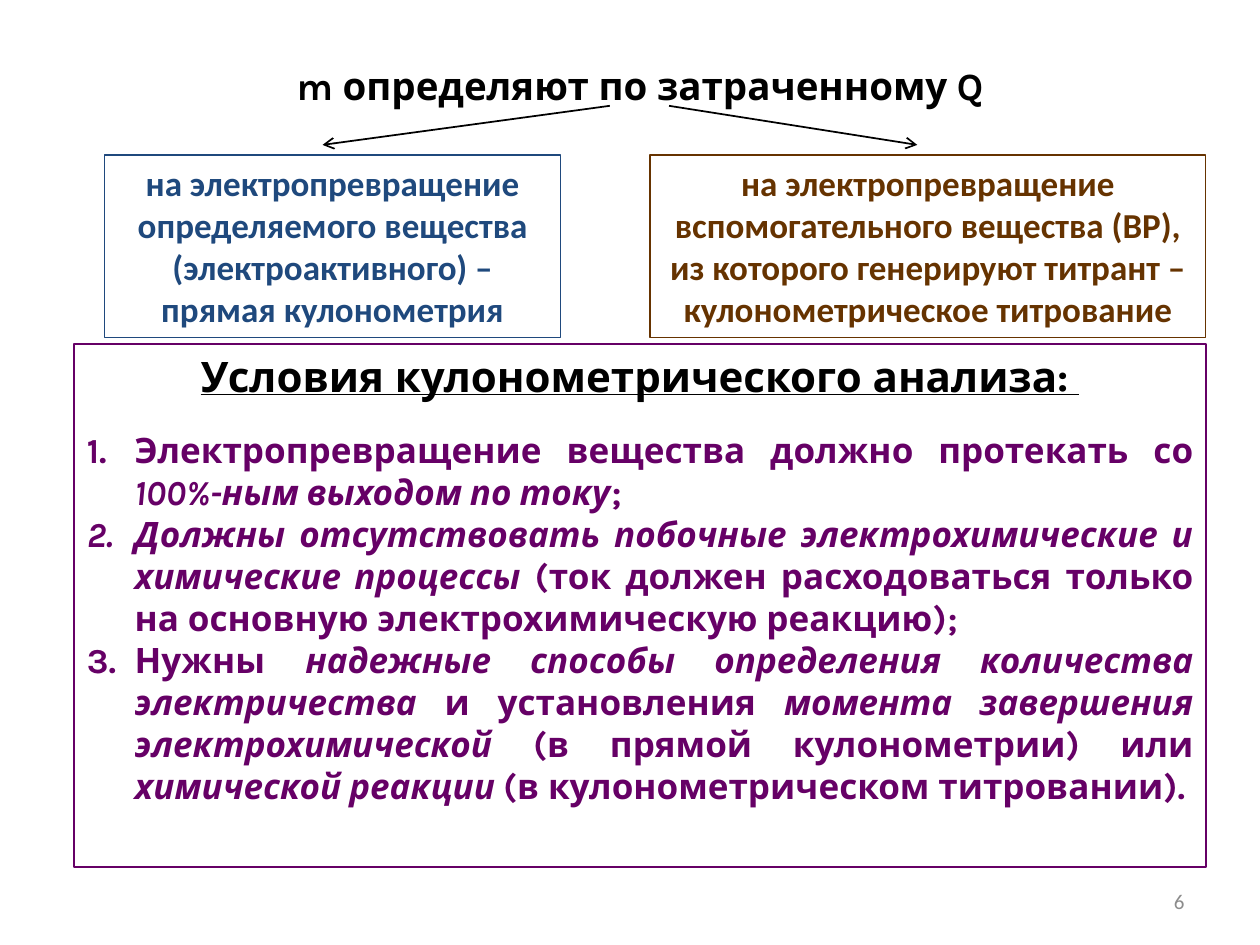
import pptx
import pptx.dml.color
import pptx.enum.shapes
import pptx.enum.text
import pptx.oxml
import pptx.oxml.ns
import pptx.util

ALIGN = pptx.enum.text.PP_ALIGN
ANCHOR = pptx.enum.text.MSO_ANCHOR
INK, BLUE, BROWN, PURPLE, GREY = "000000", "1F497D", "663300", "660066", "8C8C8C"
COLUMNS, ROWS = 100, 75


def color(hex_value):
    return pptx.dml.color.RGBColor.from_string(hex_value)


def set_all(target, values):
    for key, value in values.items():
        setattr(target, key, value)


class SlideBuilder:
    """Holds the style and the current slide, measured on a 100 by 75 grid."""

    def __init__(self, deck):
        self.slide = deck.slides.add_slide(deck.slide_layouts[6])
        self.cell_width = deck.slide_width / COLUMNS
        self.cell_height = deck.slide_height / ROWS
        self.base = {"name": "Calibri", "size": 20, "bold": True, "italic": False}

    def place(self, column, row):
        return round(column * self.cell_width), round(row * self.cell_height)

    def add_words(self, paragraph, text, hex_value, **changes):
        run = paragraph.add_run()
        run.text = text
        values = {**self.base, **changes}
        values["size"] = pptx.util.Pt(values["size"])
        set_all(run.font, values)
        run.font.color.rgb = color(hex_value)

    def text(self, area, text, hex_value, align=ALIGN.CENTER, anchor=ANCHOR.TOP, **changes):
        label = self.slide.shapes.add_textbox(*self.place(*area[:2]), *self.place(*area[2:]))
        set_all(label.text_frame, {"word_wrap": True, "vertical_anchor": anchor})
        paragraph = label.text_frame.paragraphs[0]
        paragraph.alignment = align
        self.add_words(paragraph, text, hex_value, **changes)

    def box(self, area, heading, outline, weight=0.75, heading_color=None, **changes):
        frame = self.slide.shapes.add_shape(
            pptx.enum.shapes.MSO_SHAPE.RECTANGLE,
            *self.place(*area[:2]), *self.place(*area[2:]))
        frame.shadow.inherit = False
        frame.fill.background()
        frame.line.color.rgb = color(outline)
        frame.line.width = pptx.util.Pt(weight)
        set_all(frame.text_frame, {"word_wrap": True, "vertical_anchor": ANCHOR.TOP})
        paragraph = frame.text_frame.paragraphs[0]
        paragraph.alignment = ALIGN.CENTER
        self.add_words(paragraph, heading, heading_color or outline, **changes)
        return frame.text_frame

    def numbered(self, text_frame, items, hex_value, **changes):
        text_frame.paragraphs[0].space_after = pptx.util.Pt(16)
        indent = pptx.util.Inches(0.38)
        for item in items:
            paragraph = text_frame.add_paragraph()
            paragraph.alignment = ALIGN.JUSTIFY
            properties = paragraph._p.get_or_add_pPr()
            properties.set("marL", str(indent))
            properties.set("indent", str(-indent))
            properties.append(pptx.oxml.parse_xml(
                f'<a:buAutoNum {pptx.oxml.ns.nsdecls("a")} type="arabicPeriod"/>'))
            for text, italic in item:
                self.add_words(paragraph, text, hex_value, italic=italic, **changes)

    def arrow(self, start, end):
        line = self.slide.shapes.add_connector(
            pptx.enum.shapes.MSO_CONNECTOR.STRAIGHT, *self.place(*start), *self.place(*end))
        line.line.color.rgb = color(INK)
        line.line.width = pptx.util.Pt(1)
        namespace = pptx.oxml.ns.nsdecls("a")
        line.line._get_or_add_ln().append(
            pptx.oxml.parse_xml(f'<a:tailEnd {namespace} type="arrow"/>'))
        line._element.spPr.append(pptx.oxml.parse_xml(f"<a:effectLst {namespace}/>"))


CONDITIONS = [
    [("Электропревращение вещества должно протекать со ", False),
     ("100%-ным выходом по току", True), (";", False)],
    [("Должны отсутствовать побочные электрохимические и химические процессы", True),
     (" (ток должен расходоваться только на основную электрохимическую реакцию);", False)],
    [("Нужны ", False), ("надежные способы определения количества электричества", True),
     (" и установления ", False), ("момента завершения электрохимической", True),
     (" (в прямой кулонометрии) или ", False), ("химической реакции ", True),
     ("(в кулонометрическом титровании).", False)],
]
METHODS = [
    ((8.3, 12.3, 36.2, 14.5), BLUE, (48.4, 25.6),
     "на электропревращение определяемого вещества (электроактивного) – прямая кулонометрия"),
    ((51.6, 12.3, 44.1, 14.5), BROWN, (53.1, 72.8),
     "на электропревращение вспомогательного вещества (ВР), из которого генерируют "
     "титрант – кулонометрическое титрование"),
]


def main():
    deck = pptx.Presentation()
    deck.slide_width = pptx.util.Inches(10)
    deck.slide_height = pptx.util.Inches(7.5)
    builder = SlideBuilder(deck)
    builder.text((71.7, 69.5, 23.3, 4), "6", GREY, ALIGN.RIGHT, ANCHOR.MIDDLE,
                 size=12, bold=False)
    builder.text((14.6, 4.4, 72.4, 7.7), "m определяют по затраченному Q", INK,
                 name="Karla", size=22)
    for area, hue, (start, end), method in METHODS:
        builder.box(area, method, hue)
        builder.arrow((start, 8.4), (end, 11.5))
    conditions = builder.box((5.9, 27.3, 89.8, 41.5), "Условия кулонометрического анализа: ",
                             PURPLE, 1, INK, name="Karla", size=24, underline=True)
    builder.numbered(conditions, CONDITIONS, PURPLE, name="Karla")
    deck.save("out.pptx")


if __name__ == "__main__":
    main()
